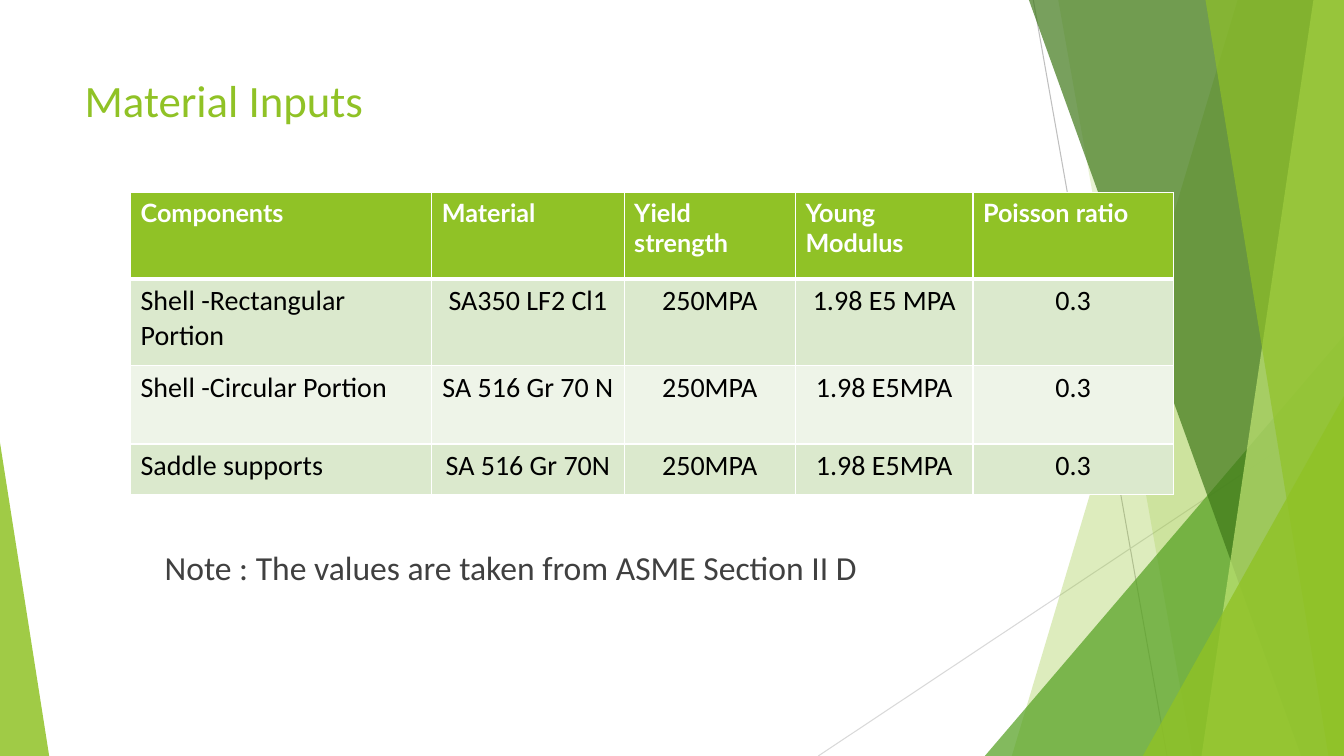
from dataclasses import dataclass

from lxml.etree import SubElement
from pptx import Presentation
from pptx.dml.color import RGBColor
from pptx.enum.shapes import MSO_CONNECTOR, MSO_SHAPE
from pptx.enum.text import MSO_ANCHOR, PP_ALIGN
from pptx.oxml.ns import qn
from pptx.util import Cm, Pt


@dataclass(frozen=True)
class Theme:
    lime: str = "90C226"
    leaf: str = "54A021"
    pine: str = "3F7819"
    pale: str = "C0E474"
    white: str = "FFFFFF"
    black: str = "000000"
    ink: str = "404040"
    bands: tuple = ("DBE9CD", "EEF4E8")
    font: str = "Calibri"
    head_font: str = "Lato"
    title: int = 32
    note: int = 24
    head: int = 18
    body: int = 20


@dataclass(frozen=True)
class Ray:
    start: tuple
    end: tuple
    color: str


@dataclass(frozen=True)
class Blade:
    """A panel from its slanted left edge to the right side of the slide."""
    top: float
    foot: float
    color: str
    alpha: int


@dataclass(frozen=True)
class Wedge:
    """A right triangle that stands on the bottom of the slide."""
    left: float
    top: float
    width: float
    tip: float
    color: str
    alpha: int


THEME = Theme()
WIDE, HIGH = 33.87, 19.05

# Backdrop, from back to front
DECOR = [
    Ray((26.04, 0), (29.41, HIGH), "BFBFBF"),
    Ray((WIDE, 10.24), (20.62, HIGH), "D9D9D9"),
    Blade(31.19, 25.5, THEME.lime, 30),
    Blade(26.67, 30.05, THEME.lime, 20),
    Wedge(24.82, 8.46, WIDE - 24.82, 1, THEME.leaf, 72),
    Blade(25.93, 32.79, THEME.pine, 70),
    Blade(33.1, 30.28, THEME.pale, 70),
    Blade(30.38, 33.48, THEME.lime, 65),
    Wedge(28.8, 9.98, WIDE - 28.8, 1, THEME.lime, 80),
    Wedge(0, 11.15, 1.24, 0, THEME.lime, 85),
]

# Table content and grid
ROWS = [
    ["Components", "Material", "Yield strength", "Young Modulus", "Poisson ratio"],
    ["Shell -Rectangular Portion", "SA350 LF2 Cl1", "250MPA", "1.98 E5 MPA", "0.3"],
    ["Shell -Circular Portion", "SA 516 Gr 70 N", "250MPA", "1.98 E5MPA", "0.3"],
    ["Saddle supports", "SA 516 Gr 70N", "250MPA", "1.98 E5MPA", "0.3"],
]
COLS = [7.59, 4.85, 4.32, 4.47, 5.05]
TALL = [2.18, 2.18, 1.98, 1.27]


def write(frame, text: str, *, size: int, color: str, font: str = THEME.font,
          bold: bool = False, align=PP_ALIGN.LEFT) -> None:
    frame.word_wrap = True
    para = frame.paragraphs[0]
    para.alignment = align
    run = para.add_run()
    run.text = text
    run.font.name, run.font.size, run.font.bold = font, Pt(size), bold
    run.font.color.rgb = RGBColor.from_string(color)


def paint(shape, color: str, alpha: int) -> None:
    shape.shadow.inherit = False
    shape.fill.solid()
    shape.fill.fore_color.rgb = RGBColor.from_string(color)
    shape.line.fill.background()
    tint = shape._element.spPr.find(qn("a:solidFill"))[0]
    SubElement(tint, qn("a:alpha"), val=str(alpha * 1000))


def draw_ray(slide, ray: Ray) -> None:
    line = slide.shapes.add_connector(
        MSO_CONNECTOR.STRAIGHT, *map(Cm, ray.start + ray.end))
    line.line.color.rgb = RGBColor.from_string(ray.color)
    line.line.width = Pt(0.75)
    SubElement(line._element.spPr, qn("a:effectLst"))


def draw_blade(slide, blade: Blade) -> None:
    form = slide.shapes.build_freeform(Cm(blade.top), 0)
    edge = [(WIDE, 0), (WIDE, HIGH), (blade.foot, HIGH)]
    form.add_line_segments([(Cm(x), Cm(y)) for x, y in edge], close=True)
    paint(form.convert_to_shape(), blade.color, blade.alpha)


def draw_wedge(slide, wedge: Wedge) -> None:
    shape = slide.shapes.add_shape(
        MSO_SHAPE.ISOSCELES_TRIANGLE, Cm(wedge.left), Cm(wedge.top),
        Cm(wedge.width), Cm(HIGH - wedge.top))
    shape.adjustments[0] = wedge.tip
    paint(shape, wedge.color, wedge.alpha)


def edge_cell(cell, row: int) -> None:
    props = cell._tc.get_or_add_tcPr()
    thick = {(0, "lnB"), (1, "lnT")}
    for spot, tag in enumerate(("lnL", "lnR", "lnT", "lnB")):
        width = Pt(3 if (row, tag) in thick else 1)
        line = props.makeelement(qn(f"a:{tag}"), {"w": str(width)})
        fill = SubElement(line, qn("a:solidFill"))
        SubElement(fill, qn("a:srgbClr"), val=THEME.white)
        props.insert(spot, line)


def draw_table(slide) -> None:
    table = slide.shapes.add_table(
        len(ROWS), len(COLS), Cm(3.29), Cm(4.85),
        Cm(sum(COLS)), Cm(sum(TALL))).table
    for col, width in zip(table.columns, COLS):
        col.width = Cm(width)
    for r, texts in enumerate(ROWS):
        table.rows[r].height = Cm(TALL[r])
        for c, text in enumerate(texts):
            cell = table.cell(r, c)
            cell.fill.solid()
            shade = THEME.bands[(r - 1) % 2] if r else THEME.lime
            cell.fill.fore_color.rgb = RGBColor.from_string(shade)
            edge_cell(cell, r)
            if r == 0:
                write(cell.text_frame, text, size=THEME.head, bold=True,
                      color=THEME.white, font=THEME.head_font)
            else:
                write(cell.text_frame, text, size=THEME.body, color=THEME.black,
                      align=PP_ALIGN.CENTER if c else PP_ALIGN.LEFT)


def main() -> None:
    deck = Presentation()
    deck.slide_width, deck.slide_height = Cm(WIDE), Cm(HIGH)
    slide = deck.slides.add_slide(deck.slide_layouts[5])

    # Backdrop
    draw = {Ray: draw_ray, Blade: draw_blade, Wedge: draw_wedge}
    for part in DECOR:
        draw[type(part)](slide, part)

    # Title
    title = slide.shapes.title
    title.left, title.top = Cm(1.88), Cm(1.7)
    title.width, title.height = Cm(23.88), Cm(3)
    title.text_frame.vertical_anchor = MSO_ANCHOR.TOP
    write(title.text_frame, "Material Inputs", size=THEME.title, color=THEME.lime)

    # Table and note
    draw_table(slide)
    note = slide.shapes.add_textbox(Cm(3.9), Cm(13.65), Cm(21.8), Cm(1.3))
    write(note.text_frame, "Note : The values are taken from ASME Section II D",
          size=THEME.note, color=THEME.ink)

    deck.save("out.pptx")


if __name__ == "__main__":
    main()
